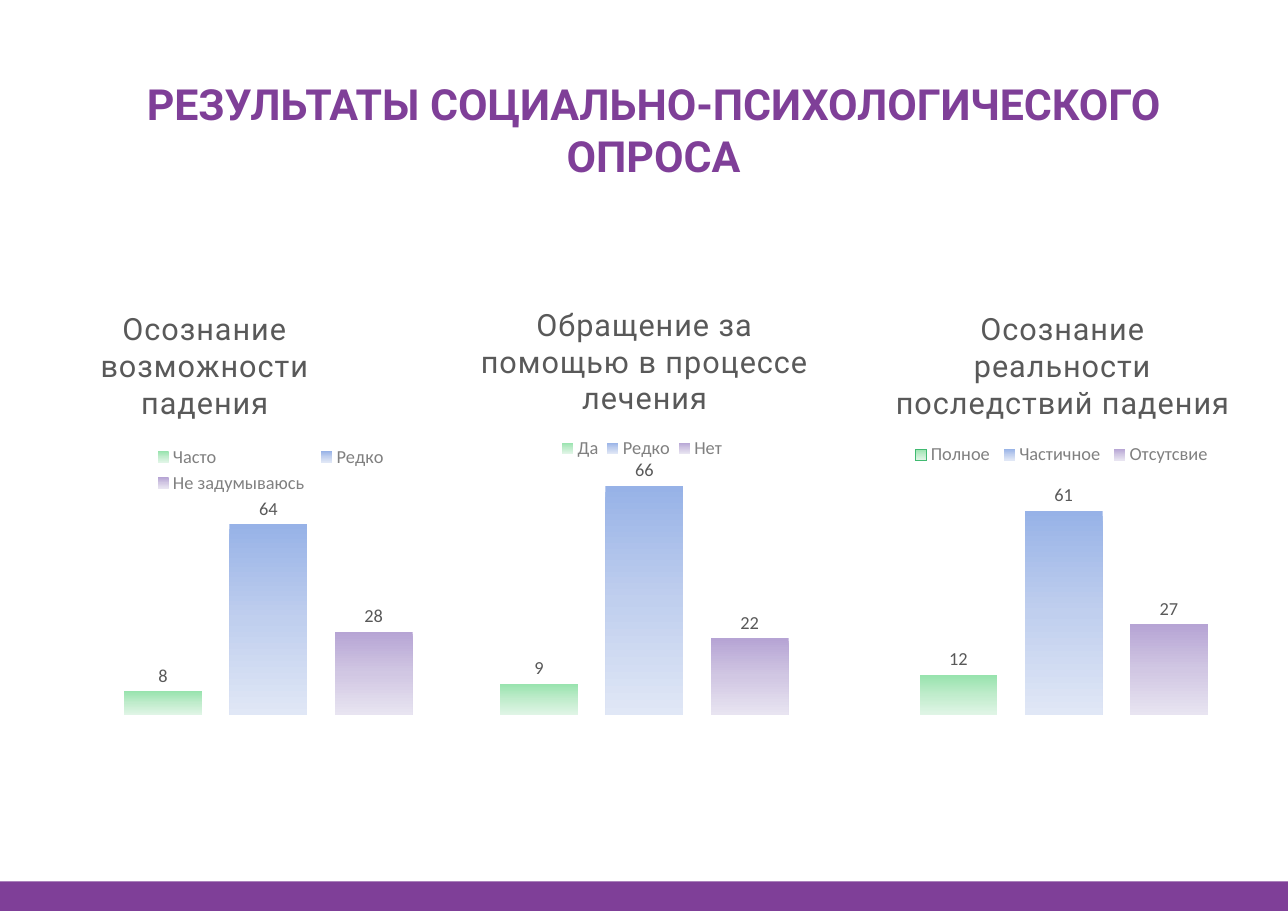
from pptx import Presentation
from pptx.chart.data import CategoryChartData
from pptx.dml.color import RGBColor
from pptx.enum.chart import XL_CHART_TYPE as ChartType
from pptx.enum.chart import XL_LABEL_POSITION as LabelPosition
from pptx.enum.chart import XL_LEGEND_POSITION as LegendPosition
from pptx.enum.shapes import MSO_SHAPE as ShapeKind
from pptx.enum.text import MSO_ANCHOR, MSO_AUTO_SIZE, PP_ALIGN
from pptx.oxml import parse_xml
from pptx.oxml.ns import nsdecls, qn
from pptx.util import Cm, Pt

COLORS = {"purple": "7F3F98", "text": "595959", "legend": "808080",
          "outline": "41BA71", "black": "000000"}
GRADIENTS = [("97E3AD", "C0ECCC", "E0F5E6"),
             ("97B2E7", "C0CFEE", "E0E7F6"),
             ("B6A4D4", "D1C7E3", "E8E4F1")]

# Places inside each chart are fractions of its side: x, y, width, height
SURVEYS = [
    {"title": "Осознание возможности падения", "left": 1.19,
     "answers": {"Часто": 8, "Редко": 64, "Не задумываюсь": 28},
     "title_at": (0.1, 0.03), "legend_at": (0.22, 0.35, 0.57, 0.13),
     "plot_at": (0.02, 0.5, 0.96, 0.48)},
    {"title": "Обращение за помощью в процессе лечения", "left": 9.86,
     "answers": {"Да": 9, "Редко": 66, "Нет": 22},
     "title_at": (0.11, 0.02), "legend_at": (0.29, 0.34, 0.41, 0.05),
     "plot_at": (0.02, 0.42, 0.96, 0.56)},
    {"title": "Осознание реальности последствий падения", "left": 19.53,
     "answers": {"Полное": 12, "Частичное": 61, "Отсутсвие": 27},
     "title_at": (0.1, 0.03), "legend_at": (0.14, 0.35, 0.71, 0.06),
     "plot_at": (0.02, 0.44, 0.96, 0.54), "outlined": True},
]


def format_font(font, color, **values):
    font.color.rgb = RGBColor.from_string(COLORS[color])
    for name, value in values.items():
        setattr(font, name, value)


def place(element, index, numbers, inner=False):
    """Give a chart part a manual layout, as child number index."""
    for old_layout in element.findall(qn("c:layout")):
        element.remove(old_layout)
    target = '<c:layoutTarget val="inner"/>' if inner else ""
    modes = '<c:xMode val="edge"/><c:yMode val="edge"/>'
    sizes = "".join(f'<c:{tag} val="{number}"/>' for tag, number in zip("xywh", numbers))
    element.insert(index, parse_xml(
        f'<c:layout {nsdecls("c")}><c:manualLayout>{target}{modes}{sizes}'
        "</c:manualLayout></c:layout>"))


presentation = Presentation()
presentation.slide_width, presentation.slide_height = Cm(29.7), Cm(21)
slide = presentation.slides.add_slide(presentation.slide_layouts[5])

# Title
title = slide.shapes.title
title.left, title.top, title.width, title.height = Cm(2.46), Cm(1.66), Cm(25.22), Cm(2.64)
title.text_frame.text = "РЕЗУЛЬТАТЫ СОЦИАЛЬНО-ПСИХОЛОГИЧЕСКОГО ОПРОСА"
frame_format = {"word_wrap": True, "auto_size": MSO_AUTO_SIZE.NONE,
                "vertical_anchor": MSO_ANCHOR.MIDDLE}
for name, value in frame_format.items():
    setattr(title.text_frame, name, value)
paragraph = title.text_frame.paragraphs[0]
paragraph.alignment = PP_ALIGN.CENTER
format_font(paragraph.runs[0].font, "purple", name="Roboto", size=Pt(28), bold=True)

# Survey charts
for survey in SURVEYS:
    data = CategoryChartData()
    data.categories = ["1"]
    for answer, count in survey["answers"].items():
        data.add_series(answer, [count])
    chart = slide.shapes.add_chart(ChartType.COLUMN_CLUSTERED, Cm(survey["left"]),
                                   Cm(6.68), Cm(10), Cm(10), data).chart
    format_font(chart.font, "black", name="Calibri", size=Pt(10))

    # Chart title with wide letter spacing
    chart.has_title = True
    chart_title = chart.chart_title
    chart_title.text_frame.text = survey["title"]
    run = chart_title.text_frame.paragraphs[0].runs[0]
    format_font(run.font, "text", name="Roboto", size=Pt(20), bold=False)
    run.font._element.set("spc", "50")
    place(chart_title._element, 1, survey["title_at"])

    # Legend
    chart.has_legend = True
    chart.legend.position = LegendPosition.TOP
    chart.legend.include_in_layout = False
    format_font(chart.legend.font, "legend", name="Calibri", size=Pt(12))
    place(chart.legend._element, 1, survey["legend_at"])

    # Hidden axes and plot area
    value_axis = chart.value_axis
    axis_format = {"visible": False, "has_major_gridlines": False,
                   "minimum_scale": 0, "maximum_scale": 70}
    for name, value in axis_format.items():
        setattr(value_axis, name, value)
    chart.category_axis.visible = False
    plot = chart.plots[0]
    plot_format = {"gap_width": 164, "overlap": -35, "vary_by_categories": False}
    for name, value in plot_format.items():
        setattr(plot, name, value)
    place(chart._chartSpace.chart.plotArea, 0, survey["plot_at"], inner=True)

    # Columns with gradients and value labels
    for series, gradient in zip(plot.series, GRADIENTS):
        stops = "".join(
            f'<a:gs pos="{position}"><a:srgbClr val="{color}"/></a:gs>'
            for position, color in zip((0, 50000, 100000), gradient))
        for part in (series, series.points[0]):
            part.format.line.fill.background()
            properties = part.format.line._get_or_add_ln().getparent()
            properties.insert(0, parse_xml(
                f'<a:gradFill {nsdecls("a")}><a:gsLst>{stops}</a:gsLst>'
                '<a:lin ang="5400000" scaled="0"/></a:gradFill>'))
        labels = series.data_labels
        labels.show_value = True
        labels.position = LabelPosition.OUTSIDE_END
        format_font(labels.font, "text", name="Calibri", size=Pt(12))
    if survey.get("outlined"):
        outline = plot.series[0].format.line
        outline.color.rgb = RGBColor.from_string(COLORS["outline"])
        outline.width = Pt(2)

# Bottom band
band = slide.shapes.add_shape(ShapeKind.RECTANGLE, 0, Cm(20.32), Cm(29.7), Cm(0.68))
band.shadow.inherit = False
band.fill.solid()
band.fill.fore_color.rgb = RGBColor.from_string(COLORS["purple"])
band.line.fill.background()

presentation.save("out.pptx")
